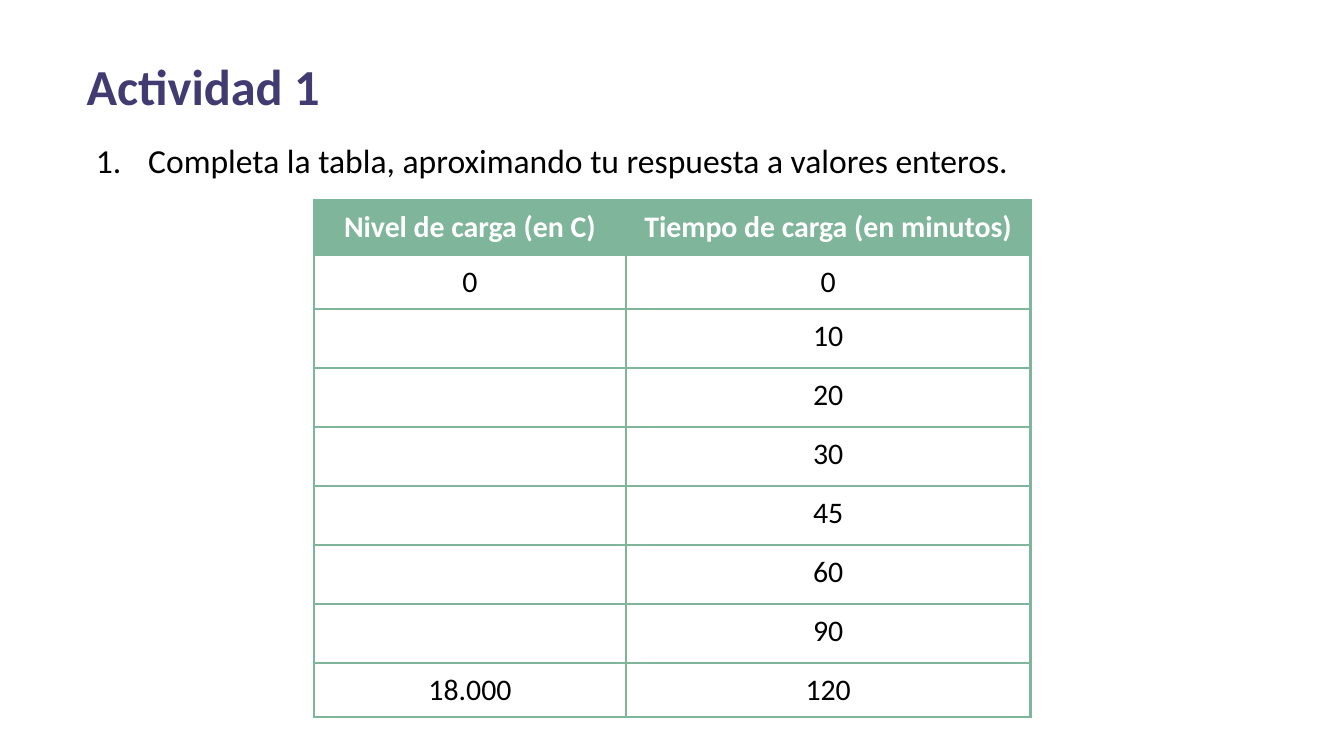
from lxml.etree import SubElement
from pptx import Presentation
from pptx.dml.color import RGBColor
from pptx.enum.text import MSO_AUTO_SIZE, PP_ALIGN
from pptx.oxml.ns import qn
from pptx.util import Pt

HUES = {"title": "423B71", "text": "000000", "green": "7FB59B", "head": "FFFFFF"}
FONT = "Calibri"
HEADS = ("Nivel de carga (en C)", "Tiempo de carga (en minutos)")
LEVELS = {0: "0", 120: "18.000"}  # charge level known at these minutes
TIMES = (0, 10, 20, 30, 45, 60, 90, 120)


def add_run(para, text, size, hue, bold=False):
    run = para.add_run()
    run.text = text
    font = run.font
    font.name, font.size, font.bold = FONT, Pt(size), bold
    font.color.rgb = RGBColor.from_string(HUES[hue])


def add_box(slide, left, top, width, height):
    """Add a wrapping text box and return its first paragraph."""
    box = slide.shapes.add_textbox(Pt(left), Pt(top), Pt(width), Pt(height))
    frame = box.text_frame
    frame.word_wrap = True
    frame.auto_size = MSO_AUTO_SIZE.SHAPE_TO_FIT_TEXT
    frame.margin_left = frame.margin_right = Pt(5.4)
    frame.margin_top = frame.margin_bottom = Pt(2.7)
    return frame.paragraphs[0]


def number(para):
    """Turn the paragraph into a numbered item with a hanging indent."""
    props = para._p.get_or_add_pPr()
    props.set("marL", str(Pt(33)))
    props.set("indent", str(Pt(-28)))
    hue = SubElement(props, qn("a:buClr"))
    SubElement(hue, qn("a:srgbClr"), val=HUES["text"])
    SubElement(props, qn("a:buFont"), typeface=FONT)
    SubElement(props, qn("a:buAutoNum"), type="arabicPeriod")


def border(cell):
    props = cell._tc.get_or_add_tcPr()
    for side in ("lnL", "lnR", "lnT", "lnB"):
        line = SubElement(props, qn(f"a:{side}"), w=str(Pt(1.5)))
        fill = SubElement(line, qn("a:solidFill"))
        SubElement(fill, qn("a:srgbClr"), val=HUES["green"])


def fill_cell(cell, text, head):
    cell.margin_left = cell.margin_right = Pt(4.8)
    cell.margin_top = cell.margin_bottom = Pt(4.8)
    border(cell)
    if head:
        cell.fill.solid()
        cell.fill.fore_color.rgb = RGBColor.from_string(HUES["green"])
    else:
        cell.fill.background()
    if text:
        para = cell.text_frame.paragraphs[0]
        para.alignment = PP_ALIGN.CENTER
        add_run(para, text, 16, "head" if head else "text", head)


def add_grid(slide, left, top, widths):
    rows = [HEADS] + [(LEVELS.get(time, ""), str(time)) for time in TIMES]
    highs = [29.2 if row[0] else 31.6 for row in rows]
    grid = slide.shapes.add_table(len(rows), len(widths), Pt(left), Pt(top),
                                  Pt(sum(widths)), Pt(sum(highs))).table
    grid.horz_banding = False
    for col, width in zip(grid.columns, widths):
        col.width = Pt(width)
    for r, (row, high) in enumerate(zip(rows, highs)):
        grid.rows[r].height = Pt(high)
        for c, text in enumerate(row):
            fill_cell(grid.cell(r, c), text, r == 0)


def main():
    deck = Presentation()
    deck.slide_width, deck.slide_height = Pt(720), Pt(405)
    slide = deck.slides.add_slide(deck.slide_layouts[6])

    # Title
    title = add_box(slide, 41, 26.8, 482.4, 38.4)
    add_run(title, "Actividad 1", 27, "title", True)

    # Task
    task = add_box(slide, 41, 72.2, 638, 27.4)
    number(task)
    add_run(task, "Completa la tabla, aproximando tu respuesta a valores enteros.",
            18, "text")

    # Table to complete
    add_grid(slide, 168.3, 107.2, (167, 216.8))

    deck.save("out.pptx")


if __name__ == "__main__":
    main()
